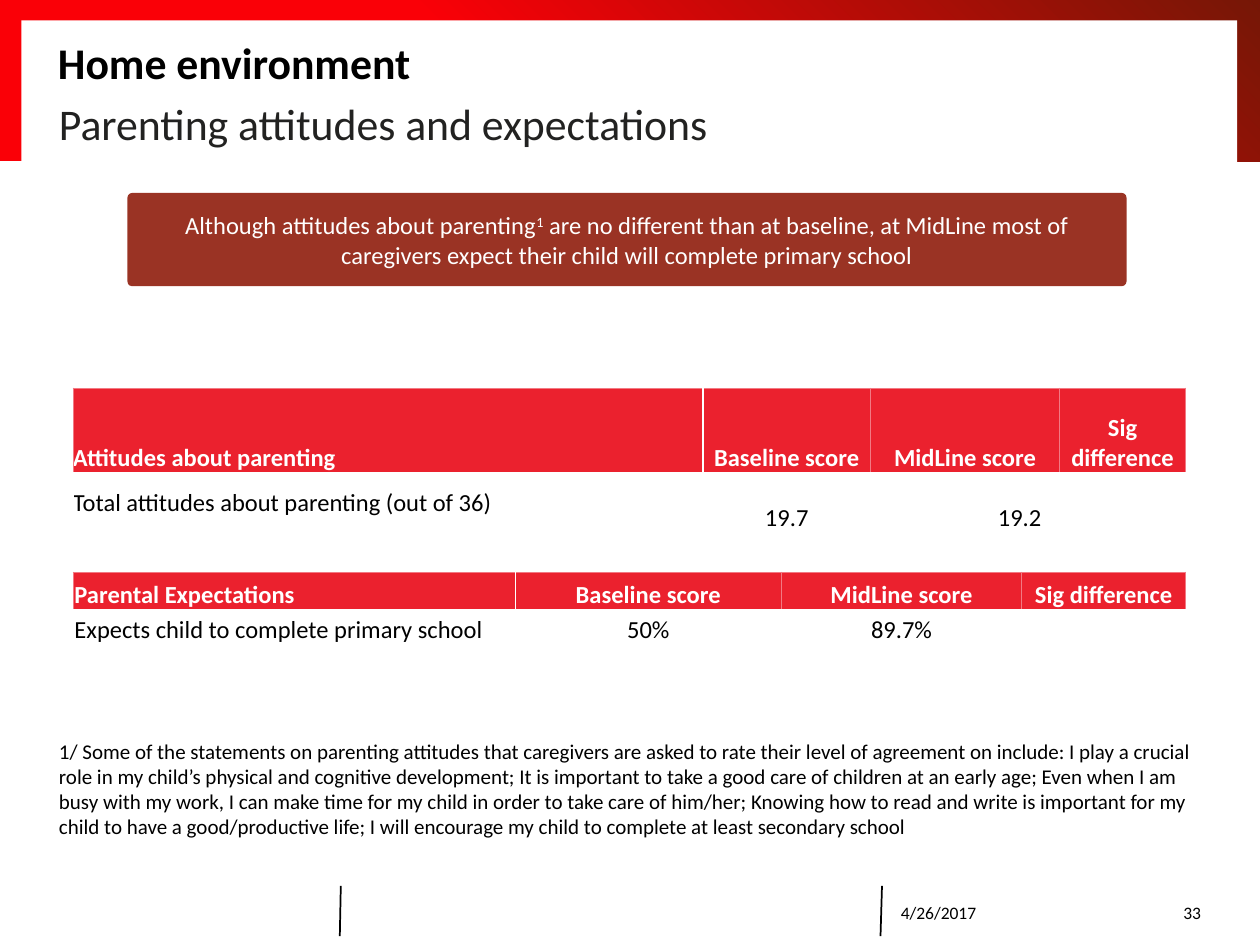
from dataclasses import dataclass

from lxml import etree
from pptx import Presentation
from pptx import util as u
from pptx.dml.color import RGBColor
from pptx.enum import shapes, text
from pptx.oxml import ns

LEFT, CENTER, RIGHT = text.PP_ALIGN.LEFT, text.PP_ALIGN.CENTER, text.PP_ALIGN.RIGHT
TOP, MIDDLE, BOTTOM = text.MSO_ANCHOR.TOP, text.MSO_ANCHOR.MIDDLE, text.MSO_ANCHOR.BOTTOM


@dataclass(frozen=True)
class Theme:
    font: str = "Calibri"
    black: str = "000000"
    white: str = "FFFFFF"
    charcoal: str = "222221"
    bright_red: str = "FA0007"
    dark_red: str = "761706"
    brick: str = "9A3324"
    header: str = "EB212E"
    border: str = "F27983"
    heading: int = 25
    body: int = 14
    note: int = 12
    footer: int = 10


class SlideBuilder:
    """Draws styled elements on the current slide."""

    def __init__(self, theme, slide):
        self.t, self.s = theme, slide

    def _style(self, p, size, color, bold=False, align=LEFT):
        p.alignment = align
        p.font.name, p.font.size, p.font.bold = self.t.font, u.Pt(size), bold
        p.font.color.rgb = RGBColor.from_string(color)

    def _frame(self, tf, anchor, insets):
        tf.word_wrap, tf.vertical_anchor = True, anchor
        tf.margin_left = tf.margin_right = u.Cm(insets[0])
        tf.margin_top = tf.margin_bottom = u.Cm(insets[1])

    def shape(self, kind, box, color):
        sp = self.s.shapes.add_shape(kind, *map(u.Cm, box))
        sp.shadow.inherit = False
        sp.fill.solid()
        sp.fill.fore_color.rgb = RGBColor.from_string(color)
        sp.line.fill.background()
        return sp

    def gradient_band(self, box, stops, angle):
        fill = self.shape(shapes.MSO_SHAPE.RECTANGLE, box, self.t.bright_red).fill
        fill.gradient()
        fill.gradient_angle = angle
        for stop, (position, color) in zip(fill.gradient_stops, stops):
            stop.position = position
            stop.color.rgb = RGBColor.from_string(color)

    def line(self, start, end):
        c = self.s.shapes.add_connector(shapes.MSO_CONNECTOR.STRAIGHT, *map(u.Cm, start + end))
        c.line.width = u.Pt(1)
        c.line.color.rgb = RGBColor.from_string(self.t.black)
        etree.SubElement(c._element.spPr, ns.qn("a:effectLst"))

    def label(self, box, words, size, color, bold=False, align=LEFT, anchor=TOP, insets=(0, 0)):
        tf = self.s.shapes.add_textbox(*map(u.Cm, box)).text_frame
        self._frame(tf, anchor, insets)
        p = tf.paragraphs[0]
        p.text = words
        self._style(p, size, color, bold, align)

    def callout(self, box, parts):
        sp = self.shape(shapes.MSO_SHAPE.ROUNDED_RECTANGLE, box, self.t.brick)
        sp.adjustments[0] = 0.05
        self._frame(sp.text_frame, MIDDLE, (0.25, 0.13))
        p = sp.text_frame.paragraphs[0]
        for words, raised in parts:
            r = p.add_run()
            r.text = words
            if raised:
                r._r.get_or_add_rPr().set("baseline", "30000")
        self._style(p, self.t.body, self.t.white, align=CENTER)

    def _border(self, cell, sides):
        tcPr = cell._tc.get_or_add_tcPr()
        for i, side in enumerate(sides):
            ln = etree.Element(ns.qn(f"a:ln{side}"), w=str(u.Pt(0.5)))
            fill = etree.SubElement(ln, ns.qn("a:solidFill"))
            etree.SubElement(fill, ns.qn("a:srgbClr"), val=self.t.border)
            tcPr.insert(i, ln)

    def table(self, left, top, widths, heights, rows, inset=0, value_anchor=MIDDLE):
        size = sum(widths), sum(heights)
        tbl = self.s.shapes.add_table(
            len(heights), len(widths), *map(u.Cm, (left, top) + size)).table
        tbl.first_row = tbl.horz_banding = False
        for col, width in zip(tbl.columns, widths):
            col.width = u.Cm(width)
        for row, height in zip(tbl.rows, heights):
            row.height = u.Cm(height)
        for i, row in enumerate(rows):
            for j, words in enumerate(row):
                cell = tbl.cell(i, j)
                cell.margin_left = cell.margin_right = cell.margin_top = u.Cm(inset)
                cell.margin_bottom = 0
                head = i == 0
                cell.vertical_anchor = BOTTOM if head else value_anchor if j else MIDDLE
                p = cell.text_frame.paragraphs[0]
                p.text = words
                color = self.t.white if head else self.t.black
                self._style(p, self.t.body, color, head, CENTER if j else LEFT)
                if head:
                    cell.fill.solid()
                    cell.fill.fore_color.rgb = RGBColor.from_string(self.t.header)
                    self._border(cell, {0: "LTB", 1: "RTB"}.get(j, "LRTB"))
                else:
                    cell.fill.background()
        return tbl


def main():
    prs = Presentation()
    prs.slide_width, prs.slide_height = u.Cm(25.4), u.Cm(19.05)
    t = Theme()
    b = SlideBuilder(t, prs.slides.add_slide(prs.slide_layouts[6]))

    b.gradient_band((0, 0, 25.4, 3.25), [(0.4, t.bright_red), (1, t.dark_red)], 45)
    b.shape(shapes.MSO_SHAPE.RECTANGLE, (0.43, 0.41, 24.51, 3), t.white)
    for x, foot_x in ((6.87, 6.85), (17.78, 17.75)):
        b.line((x, 17.86), (foot_x, 18.87))

    b.label((1.17, 0.56, 23.01, 1.4), "Home environment", t.heading, t.black, True, anchor=MIDDLE)
    b.label((1.19, 1.96, 23.01, 1.02), "Parenting attitudes and expectations", t.heading, t.charcoal)
    for left, width, words, align in (
            (17.91, 4.39, "4/26/2017", LEFT), (22.3, 2.16, "33", RIGHT)):
        b.label((left, 17.88, width, 1.02), words, t.footer, t.black,
                align=align, anchor=MIDDLE, insets=(0.25, 0.13))

    b.callout((2.57, 3.89, 20.14, 1.88), [
        ("Although attitudes about parenting", False),
        ("1", True),
        (" are no different than at baseline, at MidLine most of caregivers "
         "expect their child will complete primary school", False)])

    attitudes = b.table(1.47, 7.82, (12.7, 3.38, 3.81, 2.54), (1.72, 1.2), [
        ("Attitudes about parenting", "Baseline score", "MidLine score", "Sig difference"),
        ("Total attitudes about parenting (out of 36)", "19.7", "19.2", "")],
        value_anchor=BOTTOM)
    attitudes.cell(1, 2).margin_left = u.Cm(2.2)
    b.table(1.47, 11.53, (8.92, 5.36, 4.85, 3.3), (0.77, 0.77, 0.77), [
        ("Parental Expectations", "Baseline score", "MidLine score", "Sig difference"),
        ("Expects child to complete primary school", "50%", "89.7%", ""),
        ("", "", "", "")], inset=0.03)

    b.label((1.19, 14.88, 23.27, 2.57),
            "1/ Some of the statements on parenting attitudes that caregivers are asked to rate "
            "their level of agreement on include: I play a crucial role in my child’s physical and "
            "cognitive development; It is important to take a good care of children at an early age; "
            "Even when I am busy with my work, I can make time for my child in order to take care of "
            "him/her; Knowing how to read and write is important for my child to have a "
            "good/productive life; I will encourage my child to complete at least secondary school",
            t.note, t.black)

    prs.save("out.pptx")


if __name__ == "__main__":
    main()
